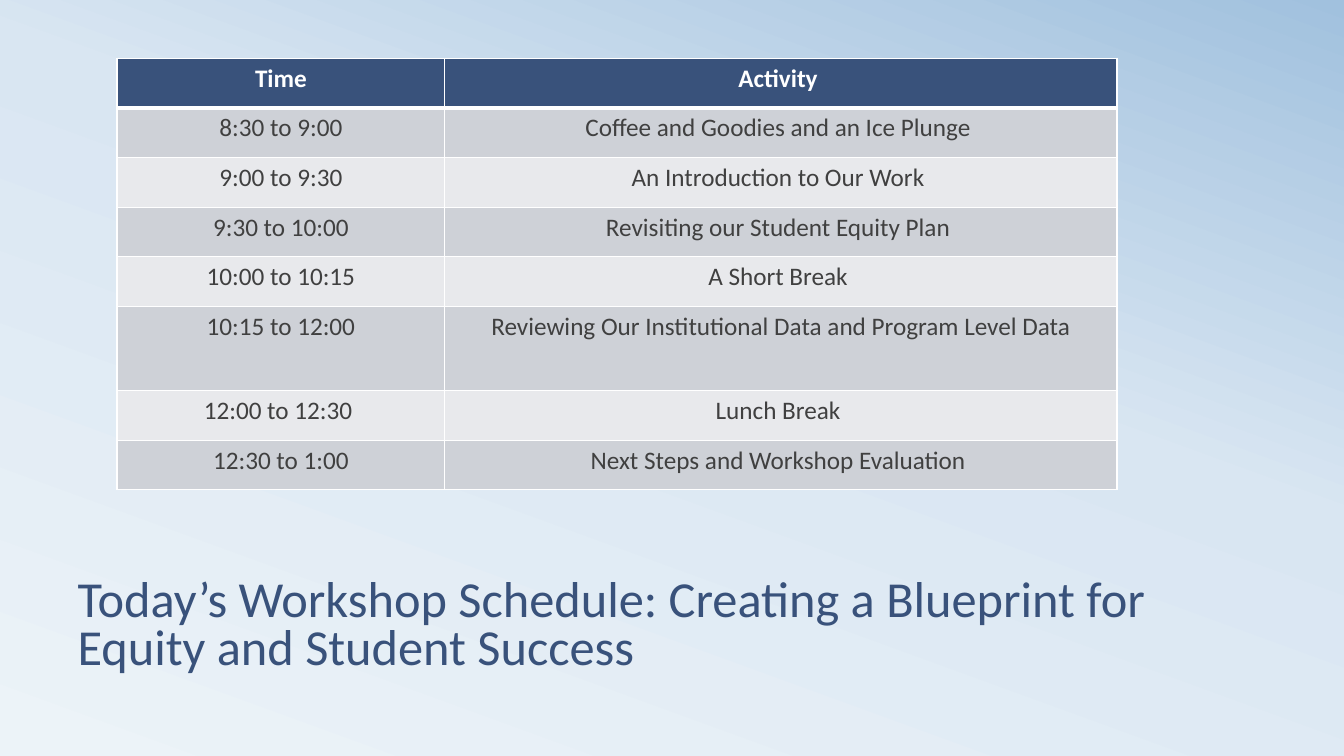
from copy import deepcopy

from lxml import etree
from pptx import Presentation
from pptx.dml.color import RGBColor
from pptx.enum.text import MSO_ANCHOR, MSO_AUTO_SIZE, PP_ALIGN
from pptx.oxml.ns import qn
from pptx.util import Cm, Pt

CENTER = PP_ALIGN.CENTER
LEFT = PP_ALIGN.LEFT
BOTTOM = MSO_ANCHOR.BOTTOM
NO_AUTOFIT = MSO_AUTO_SIZE.NONE

TITLE = "Today’s Workshop Schedule: Creating a Blueprint for Equity and Student Success"
SCHEDULE = [
    ("Time", "Activity "),
    ("8:30 to 9:00", "Coffee and Goodies and an Ice Plunge "),
    ("9:00 to 9:30", "An Introduction to Our Work "),
    ("9:30 to 10:00", "Revisiting our Student Equity Plan "),
    ("10:00 to 10:15", "A Short Break "),
    ("10:15 to 12:00", "Reviewing Our Institutional Data and Program Level Data"),
    ("12:00 to 12:30 ", "Lunch Break "),
    ("12:30 to 1:00", "Next Steps and Workshop Evaluation "),
]
ROW_HEIGHT = 1.25
TALL_ROW, TALL_HEIGHT = 5, 2.12
COLUMN_WIDTHS = (8.26, 16.94)


def color(hex_string):
    return RGBColor.from_string(hex_string)


class ScheduleSlide:
    font = "Calibri"
    navy = "39527B"
    white = "FFFFFF"
    body_text = "404040"
    bands = ("E8E9EC", "CED1D7")
    gradient = ((0, "ECF3F8"), (0.58, "D9E6F2"), (1, "A1C1DE"))

    def __init__(self, presentation):
        self.slide = presentation.slides.add_slide(presentation.slide_layouts[5])

    def format_text(self, text_frame, size, hex_string, alignment, bold=False):
        for paragraph in text_frame.paragraphs:
            paragraph.alignment = alignment
            for run in paragraph.runs:
                run.font.name = self.font
                run.font.size = Pt(size)
                run.font.bold = bold
                run.font.color.rgb = color(hex_string)

    def add_background(self):
        fill = self.slide.background.fill
        fill.gradient()
        fill.gradient_angle = 70
        stop_list = next(self.slide._element.iter(qn("a:gsLst")))
        stop_list.append(deepcopy(stop_list[0]))
        for stop, (position, hex_string) in zip(fill.gradient_stops, self.gradient):
            stop.position = position
            stop.color.rgb = color(hex_string)

    def add_title(self, text, left, top, width, height):
        title = self.slide.shapes.title
        title.left, title.top = Cm(left), Cm(top)
        title.width, title.height = Cm(width), Cm(height)
        text_frame = title.text_frame
        text_frame.text = text
        text_frame.word_wrap = True
        text_frame.auto_size = NO_AUTOFIT
        text_frame.vertical_anchor = BOTTOM
        text_frame.paragraphs[0].line_spacing = 0.8
        self.format_text(text_frame, 36, self.navy, LEFT)

    def add_borders(self, cell, top_width, bottom_width):
        properties = cell._tc.get_or_add_tcPr()
        widths = (("L", 1), ("R", 1), ("T", top_width), ("B", bottom_width))
        for index, (side, width) in enumerate(widths):
            line = etree.Element(qn(f"a:ln{side}"), w=str(Pt(width)))
            solid = etree.SubElement(line, qn("a:solidFill"))
            etree.SubElement(solid, qn("a:srgbClr"), val=self.white)
            properties.insert(index, line)

    def add_table(self, rows, left, top):
        heights = [TALL_HEIGHT if index == TALL_ROW else ROW_HEIGHT
                   for index in range(len(rows))]
        table = self.slide.shapes.add_table(
            len(rows), len(COLUMN_WIDTHS), Cm(left), Cm(top),
            Cm(sum(COLUMN_WIDTHS)), Cm(sum(heights))).table
        for column, width in zip(table.columns, COLUMN_WIDTHS):
            column.width = Cm(width)
        for row_index, values in enumerate(rows):
            table.rows[row_index].height = Cm(heights[row_index])
            header = row_index == 0
            for column_index, value in enumerate(values):
                cell = table.cell(row_index, column_index)
                cell.text_frame.text = value
                self.format_text(cell.text_frame, 18,
                                 self.white if header else self.body_text,
                                 CENTER, bold=header)
                cell.fill.solid()
                cell.fill.fore_color.rgb = color(
                    self.navy if header else self.bands[row_index % 2])
                self.add_borders(cell, 3 if row_index == 1 else 1, 3 if header else 1)


def main():
    presentation = Presentation()
    presentation.slide_width, presentation.slide_height = Cm(33.87), Cm(19.05)
    schedule = ScheduleSlide(presentation)
    schedule.add_background()
    schedule.add_title(TITLE, 1.7, 14.17, 30.48, 2.97)
    schedule.add_table(SCHEDULE, 2.95, 1.47)
    presentation.save("out.pptx")


if __name__ == "__main__":
    main()
